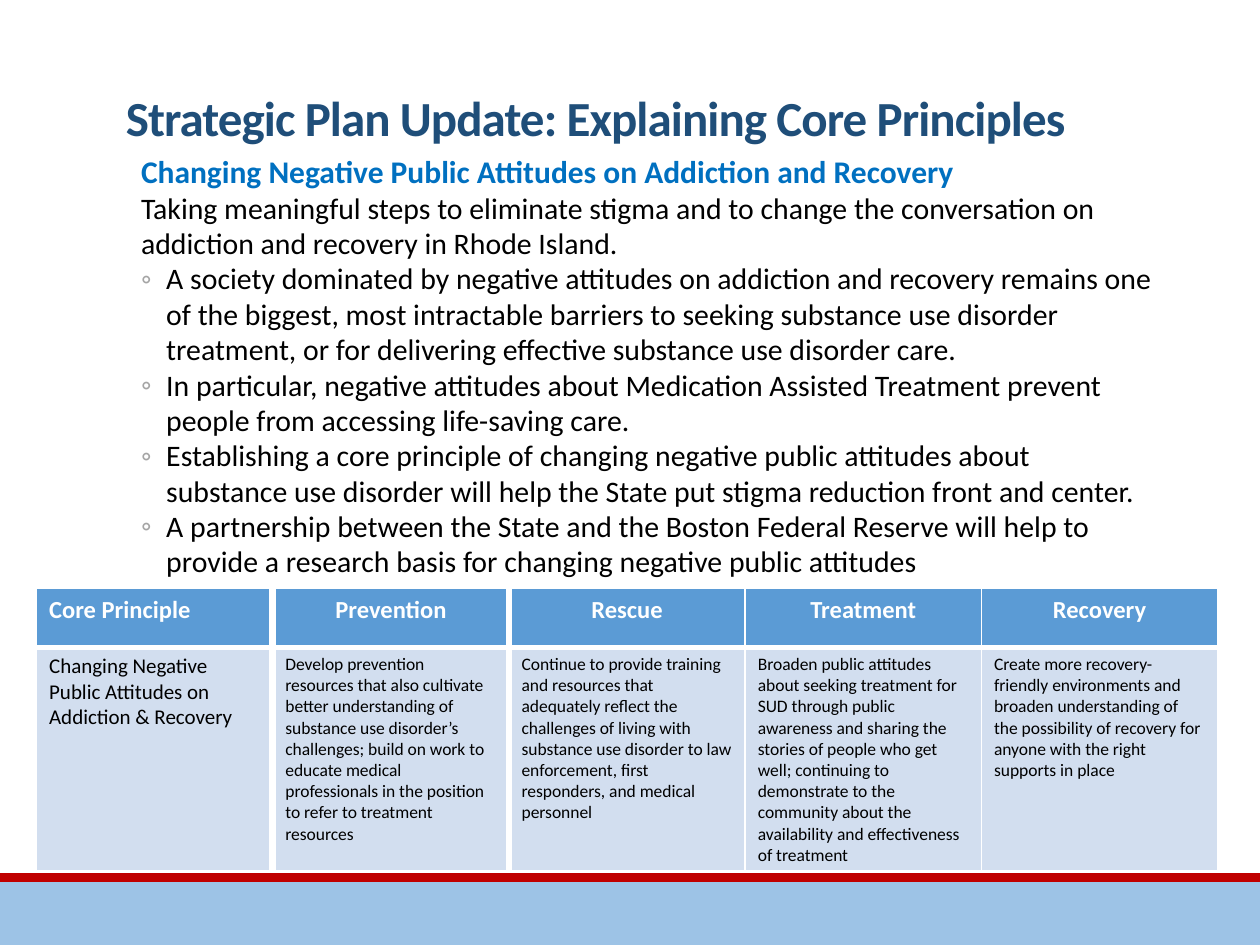
from lxml.etree import SubElement
from pptx import Presentation
from pptx.dml.color import RGBColor
from pptx.enum.shapes import MSO_SHAPE
from pptx.enum.text import MSO_ANCHOR, PP_ALIGN
from pptx.oxml.ns import qn
from pptx.util import Pt

BULLETS = [
    "A society dominated by negative attitudes on addiction and recovery remains one of the biggest, most intractable barriers to seeking substance use disorder treatment, or for delivering effective substance use disorder care.",
    "In particular, negative attitudes about Medication Assisted Treatment prevent people from accessing life-saving care.",
    "Establishing a core principle of changing negative public attitudes about substance use disorder will help the State put stigma reduction front and center.",
    "A partnership between the State and the Boston Federal Reserve will help to provide a research basis for changing negative public attitudes",
]
PRINCIPLES = [
    ("Core Principle", "Changing Negative Public Attitudes on Addiction & Recovery"),
    ("Prevention", "Develop prevention resources that also cultivate better understanding of substance use disorder’s challenges; build on work to educate medical professionals in the position to refer to treatment resources"),
    ("Rescue", "Continue to provide training and resources that adequately reflect the challenges of living with substance use disorder to law enforcement, first responders, and medical personnel"),
    ("Treatment", "Broaden public attitudes about seeking treatment for SUD through public awareness and sharing the stories of people who get well; continuing to demonstrate to the community about the availability and effectiveness of treatment"),
    ("Recovery", "Create more recovery-friendly environments and broaden understanding of the possibility of recovery for anyone with the right supports in place"),
]


def color(hex_code):
    return RGBColor.from_string(hex_code)


class SlideBuilder:
    font = "Calibri"
    white, black = "FFFFFF", "000000"
    navy, blue, gray = "1F4E79", "0070C0", "A5A5A5"
    sky, red = "9DC3E6", "C00000"
    header_fill, body_fill = "5B9BD5", "D2DEEF"

    def __init__(self, slide):
        self.slide = slide

    def band(self, top, height, fill):
        band = self.slide.shapes.add_shape(
            MSO_SHAPE.RECTANGLE, 0, Pt(top), Pt(720), Pt(height))
        band.shadow.inherit = False
        band.fill.solid()
        band.fill.fore_color.rgb = color(fill)
        band.line.fill.background()

    def frame(self, left, top, width, height, side_inset=7.2):
        box = self.slide.shapes.add_textbox(Pt(left), Pt(top), Pt(width), Pt(height))
        frame = box.text_frame
        frame.word_wrap = True
        frame.margin_left = frame.margin_right = Pt(side_inset)
        return frame

    def set_text(self, paragraph, text, size, ink, bold=False, spacing=0):
        paragraph.text = text
        for run in paragraph.runs:
            run.font.name = self.font
            run.font.size = Pt(size)
            run.font.bold = bold
            run.font.color.rgb = color(ink)
            if spacing:
                run.font._element.set("spc", str(int(spacing * 100)))

    def indent(self, paragraph, left, hanging=0, bullet=None):
        props = paragraph._p.get_or_add_pPr()
        props.set("marL", str(Pt(left)))
        props.set("indent", str(-Pt(hanging)))
        if bullet:
            bullet_color = SubElement(props, qn("a:buClr"))
            SubElement(bullet_color, qn("a:srgbClr"), val=self.gray)
            SubElement(props, qn("a:buFont"), typeface=self.font)
            SubElement(props, qn("a:buChar"), char=bullet)

    def borders(self, cell, left, right, top, bottom):
        props = cell._tc.get_or_add_tcPr()
        edges = zip(("a:lnL", "a:lnR", "a:lnT", "a:lnB"), (left, right, top, bottom))
        for position, (tag, width) in enumerate(edges):
            edge = SubElement(props, qn(tag), w=str(Pt(width)))
            fill = SubElement(edge, qn("a:solidFill"))
            SubElement(fill, qn("a:srgbClr"), val=self.white)
            props.insert(position, edge)

    def table(self, left, top, width, row_heights, columns):
        grid = self.slide.shapes.add_table(
            len(row_heights), len(columns), Pt(left), Pt(top),
            Pt(width), Pt(sum(row_heights))).table
        for row, height in zip(grid.rows, row_heights):
            row.height = Pt(height)
        # The first two columns are set apart by wide gaps
        gaps = [1, 4.5, 4.5, 1, 1, 1]
        for c, (heading, description) in enumerate(columns):
            grid.columns[c].width = Pt(width / len(columns))
            header, body = grid.cell(0, c), grid.cell(1, c)
            for cell, fill in ((header, self.header_fill), (body, self.body_fill)):
                cell.fill.solid()
                cell.fill.fore_color.rgb = color(fill)
            self.borders(header, gaps[c], gaps[c + 1], 1, 3)
            self.borders(body, gaps[c], gaps[c + 1], 3, 1)
            heading_line = header.text_frame.paragraphs[0]
            self.set_text(heading_line, heading, 14, self.white, bold=True)
            heading_line.alignment = PP_ALIGN.CENTER if c else PP_ALIGN.LEFT
            self.set_text(body.text_frame.paragraphs[0], description,
                          10 if c else 12, self.black)


def main():
    deck = Presentation()
    deck.slide_width, deck.slide_height = Pt(720), Pt(540)
    builder = SlideBuilder(deck.slides.add_slide(deck.slide_layouts[6]))

    # Footer bands
    builder.band(504, 36, builder.sky)
    builder.band(499, 5, builder.red)

    # Title
    title = builder.frame(64.8, 37.5, 597.6, 49.7)
    title.vertical_anchor = MSO_ANCHOR.BOTTOM
    headline = title.paragraphs[0]
    builder.set_text(headline, "Strategic Plan Update: Explaining Core Principles",
                     28, builder.navy, bold=True, spacing=-0.5)
    headline.line_spacing = 0.85

    # Principle, summary and bullets
    body = builder.frame(64.8, 84.2, 594, 370, side_inset=0)
    principle, summary = body.paragraphs[0], body.add_paragraph()
    builder.set_text(principle, "Changing Negative Public Attitudes on Addiction and Recovery",
                     18, builder.blue, bold=True)
    builder.set_text(summary, "Taking meaningful steps to eliminate stigma and to change the conversation on addiction and recovery in Rhode Island.",
                     17, builder.black)
    for paragraph in (principle, summary):
        builder.indent(paragraph, 15.8)
    for reason in BULLETS:
        paragraph = body.add_paragraph()
        builder.set_text(paragraph, reason, 17, builder.black)
        builder.indent(paragraph, 30.2, 14.4, "◦")
    for paragraph in body.paragraphs:
        paragraph.line_spacing = 0.99

    # Core principle table
    builder.table(20.9, 336.4, 675, (33.6, 127), PRINCIPLES)

    deck.save("out.pptx")


if __name__ == "__main__":
    main()
